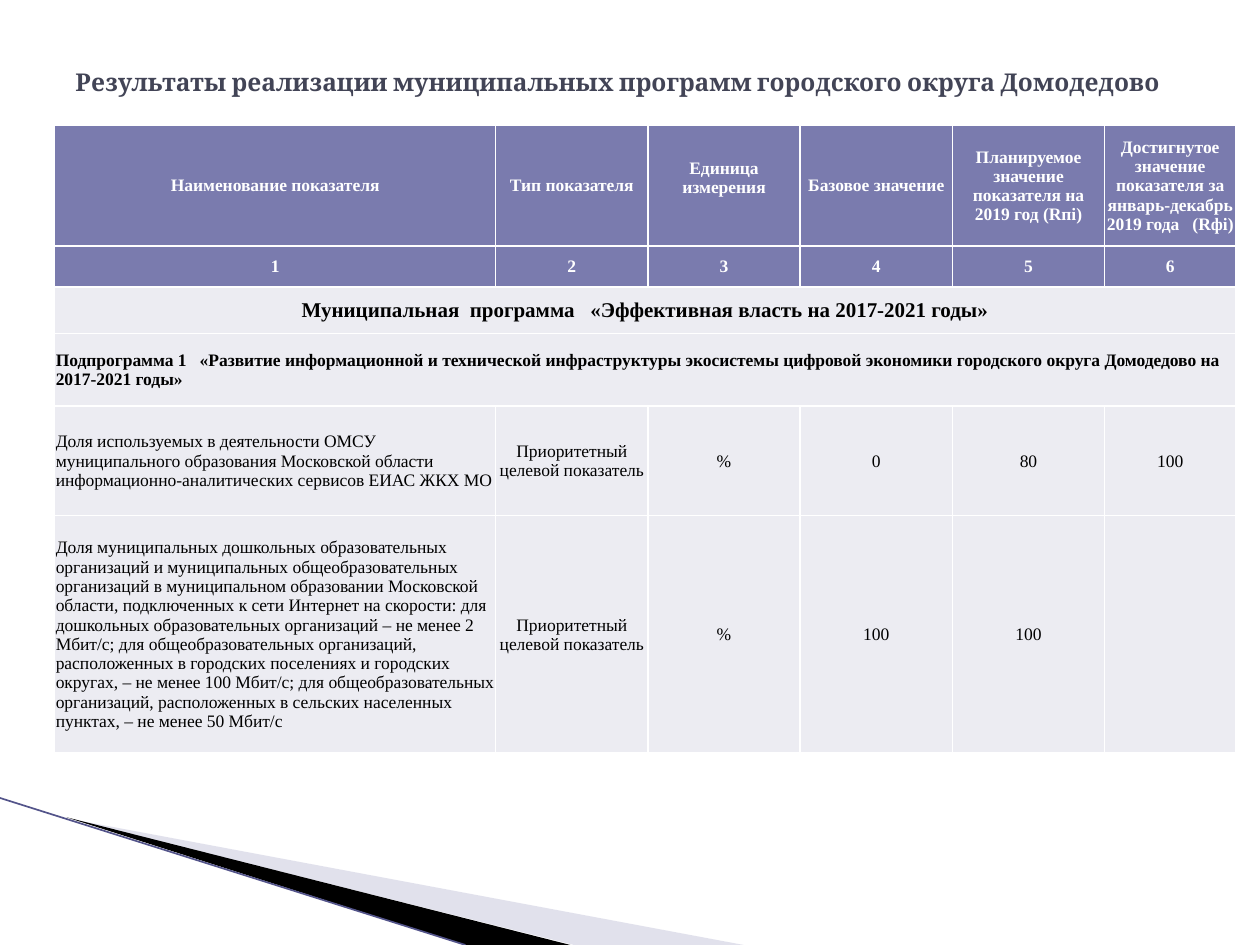
from dataclasses import dataclass

from lxml import etree
from pptx import Presentation
from pptx import util as u
from pptx.dml import color as c
from pptx.enum import shapes, text
from pptx.oxml import ns

Pt = u.Pt


@dataclass(frozen=True)
class Theme:
    title: str = "424456"
    head: str = "7A7BAE"
    body: str = "ECECF2"
    light: str = "FFFFFF"
    dark: str = "000000"
    pale: str = "B6B6D1"
    edge: str = "53548A"
    serif: str = "Times New Roman"
    display: str = "Cambria"
    big: int = 14
    mid: int = 12
    small: int = 10


T = Theme()
MID = text.PP_ALIGN.CENTER
LEFT = text.PP_ALIGN.LEFT

COLS = [252, 87, 87, 87, 87, 75]
ROWS = [69, 23.5, 26.5, 41.5, 62.5, 136]
TYPE = "Приоритетный целевой показатель"
DATA = [
    ["Наименование показателя", "Тип показателя", "Единица измерения",
     "Базовое значение", "Планируемое значение показателя на 2019 год (Rпi)",
     "Достигнутое значение показателя за январь-декабрь 2019 года   (Rфi)"],
    ["1", "2", "3", "4", "5", "6"],
    ["Муниципальная  программа   «Эффективная власть на 2017-2021 годы»"],
    ["Подпрограмма 1   «Развитие информационной и технической инфраструктуры "
     "экосистемы цифровой экономики городского округа Домодедово на "
     "2017-2021 годы»"],
    ["Доля используемых в деятельности ОМСУ муниципального образования "
     "Московской области информационно-аналитических сервисов ЕИАС ЖКХ МО",
     TYPE, "%", "0", "80", "100"],
    ["Доля муниципальных дошкольных образовательных организаций и "
     "муниципальных общеобразовательных организаций в муниципальном "
     "образовании Московской области, подключенных к сети Интернет на "
     "скорости: для дошкольных образовательных организаций – не менее 2 "
     "Мбит/с; для общеобразовательных организаций, расположенных в городских "
     "поселениях и городских округах, – не менее 100 Мбит/с; для "
     "общеобразовательных организаций, расположенных в сельских населенных "
     "пунктах, – не менее 50 Мбит/с",
     TYPE, "%", "100", "100", ""],
]


def rgb(code):
    return c.RGBColor.from_string(code)


def style(para, face, size, code, bold, align):
    para.alignment = align
    font = para.font
    font.name, font.size, font.bold = face, Pt(size), bold
    font.color.rgb = rgb(code)


def wedge(slide, points, code, alpha=None):
    """Filled triangle-like strip through the given points."""
    build = slide.shapes.build_freeform(*points[0], scale=Pt(1))
    build.add_line_segments(points[1:], close=True)
    shape = build.convert_to_shape()
    shape.shadow.inherit = False
    shape.fill.solid()
    shape.fill.fore_color.rgb = rgb(code)
    shape.line.fill.background()
    if alpha:
        tint = next(shape.element.spPr.iter(ns.qn("a:srgbClr")))
        etree.SubElement(tint, ns.qn("a:alpha"), val=str(alpha * 1000))


def rule(slide, start, end, code, width):
    line = slide.shapes.add_connector(
        shapes.MSO_CONNECTOR.STRAIGHT, *map(Pt, start + end))
    line.line.color.rgb = rgb(code)
    line.line.width = Pt(width)
    etree.SubElement(line.element.spPr, ns.qn("a:effectLst"))


def title(slide, words):
    box = slide.shapes.add_textbox(Pt(36), Pt(21.6), Pt(648), Pt(49.7))
    frame = box.text_frame
    frame.word_wrap = True
    frame.vertical_anchor = text.MSO_ANCHOR.MIDDLE
    frame.text = words
    style(frame.paragraphs[0], T.display, T.big, T.title, True, LEFT)


def border(cell, code):
    props = cell._tc.get_or_add_tcPr()
    for side in ("a:lnL", "a:lnR", "a:lnT", "a:lnB"):
        line = etree.SubElement(props, ns.qn(side), w=str(Pt(1)))
        fill = etree.SubElement(line, ns.qn("a:solidFill"))
        etree.SubElement(fill, ns.qn("a:srgbClr"), val=code)


def paint(cell, row, col):
    """Borders, margins and fill shared by every cell."""
    border(cell, T.light)
    cell.fill.solid()
    cell.fill.fore_color.rgb = rgb(T.head if row < 2 else T.body)
    cell.vertical_anchor = text.MSO_ANCHOR.MIDDLE
    cell.margin_left = cell.margin_right = cell.margin_top = Pt(0.7)
    # The unit heading sits a little above the middle
    cell.margin_bottom = Pt(9.5 if (row, col) == (0, 2) else 0)


def table(slide):
    grid = slide.shapes.add_table(
        len(ROWS), len(COLS), Pt(31.2), Pt(71.5),
        Pt(sum(COLS)), Pt(sum(ROWS))).table
    for col, width in zip(grid.columns, COLS):
        col.width = Pt(width)
    for row, height in zip(grid.rows, ROWS):
        row.height = Pt(height)
    for i, words in enumerate(DATA):
        for j in range(len(COLS)):
            paint(grid.cell(i, j), i, j)
        if len(words) == 1:
            grid.cell(i, 0).merge(grid.cell(i, len(COLS) - 1))
        for j, word in enumerate(words):
            cell = grid.cell(i, j)
            cell.text = word
            style(cell.text_frame.paragraphs[0], T.serif,
                  T.mid if i == 2 else T.small,
                  T.light if i < 2 else T.dark, i < 4,
                  LEFT if i > 2 and j == 0 else MID)


def main():
    deck = Presentation()
    deck.slide_width, deck.slide_height = Pt(720), Pt(540)
    slide = deck.slides.add_slide(deck.slide_layouts[6])

    # Corner ornament
    wedge(slide, [(39.6, 468.4), (425, 540), (328, 540)], T.pale, 40)
    wedge(slide, [(38.2, 467.3), (326, 540), (266, 540)], T.dark)
    rule(slide, (0, 456), (266, 540), T.edge, 0.95)

    # Heading and results
    title(slide, "Результаты реализации муниципальных программ "
                 "городского округа Домодедово")
    table(slide)
    deck.save("out.pptx")


if __name__ == "__main__":
    main()
